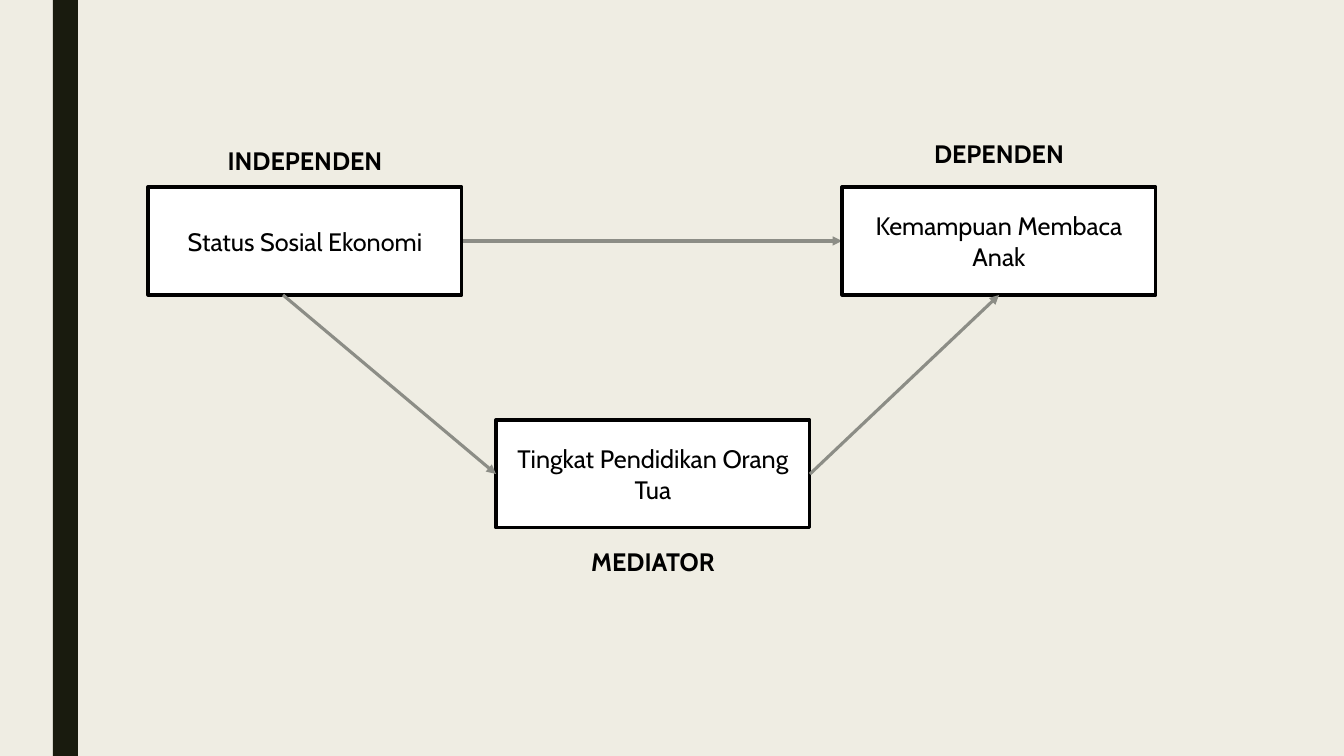
from lxml.etree import SubElement
from pptx import Presentation
from pptx.dml.color import RGBColor
from pptx.enum.shapes import MSO_CONNECTOR, MSO_SHAPE
from pptx.enum.text import MSO_ANCHOR, MSO_AUTO_SIZE, PP_ALIGN
from pptx.oxml.ns import qn
from pptx.util import Emu, Pt

CREAM = RGBColor(0xEF, 0xED, 0xE3)
OLIVE = RGBColor(0x19, 0x1B, 0x0E)
GREY = RGBColor(0x8C, 0x8D, 0x86)
WHITE = RGBColor(0xFF, 0xFF, 0xFF)
BLACK = RGBColor(0x00, 0x00, 0x00)

PAGE_WIDTH, PAGE_HEIGHT = 1344, 756
BOX_WIDTH, BOX_HEIGHT, LABEL_HEIGHT = 314, 108, 40
LINE_WIDTH = Pt(2.25)
TEXT_FORMAT = {"name": "Cabin", "size": Pt(18)}

# Variable boxes: left, top, wording, label, label offset from box top
INDEPENDENT = (148, 187, "Status Sosial Ekonomi", "INDEPENDEN", -47)
MEDIATOR = (496, 420, "Tingkat Pendidikan Orang Tua", "MEDIATOR", 121)
DEPENDENT = (842, 187, "Kemampuan Membaca Anak", "DEPENDEN", -54)


def px(length):
    return Emu(round(length * 914400 / 100.8))


def add_rectangle(page, left, top, width, height, fill):
    box = page.shapes.add_shape(
        MSO_SHAPE.RECTANGLE, px(left), px(top), px(width), px(height))
    box.shadow.inherit = False
    box.fill.solid()
    box.fill.fore_color.rgb = fill
    box.line.fill.background()
    return box


def write_text(box, text, bold=False):
    box.text_frame.word_wrap = True
    para = box.text_frame.paragraphs[0]
    para.alignment = PP_ALIGN.CENTER
    span = para.add_run()
    span.text = text
    for name, value in {**TEXT_FORMAT, "bold": bold}.items():
        setattr(span.font, name, value)
    span.font.color.rgb = BLACK


def add_variable(page, left, top, text, label, label_offset):
    box = add_rectangle(page, left, top, BOX_WIDTH, BOX_HEIGHT, WHITE)
    box.line.color.rgb = BLACK
    box.line.width = LINE_WIDTH
    box.text_frame.vertical_anchor = MSO_ANCHOR.MIDDLE
    write_text(box, text)

    caption = page.shapes.add_textbox(
        px(left), px(top + label_offset), px(BOX_WIDTH), px(LABEL_HEIGHT))
    write_text(caption, label, bold=True)
    caption.text_frame.auto_size = MSO_AUTO_SIZE.SHAPE_TO_FIT_TEXT


def add_arrow(page, start, end):
    arrow = page.shapes.add_connector(
        MSO_CONNECTOR.STRAIGHT, *(px(length) for length in (*start, *end)))
    arrow.line.color.rgb = GREY
    arrow.line.width = LINE_WIDTH
    SubElement(arrow.line._get_or_add_ln(), qn("a:tailEnd"), type="triangle")
    SubElement(arrow._element.spPr, qn("a:effectLst"))


def anchor(variable, across, down):
    """Point on a box, as fractions of its width and height."""
    return variable[0] + across * BOX_WIDTH, variable[1] + down * BOX_HEIGHT


def add_background(page):
    page.background.fill.solid()
    page.background.fill.fore_color.rgb = CREAM
    add_rectangle(page, 53, 0, 25, PAGE_HEIGHT, OLIVE)


def add_model(page):
    # Direct path lies behind the boxes
    add_arrow(page, anchor(INDEPENDENT, 1, 0.5), anchor(DEPENDENT, 0, 0.5))
    for variable in (INDEPENDENT, MEDIATOR, DEPENDENT):
        add_variable(page, *variable)
    # Mediated path
    add_arrow(page, anchor(INDEPENDENT, 0.43, 1), anchor(MEDIATOR, 0, 0.5))
    add_arrow(page, anchor(MEDIATOR, 1, 0.5), anchor(DEPENDENT, 0.5, 1))


def main():
    deck = Presentation()
    deck.slide_width, deck.slide_height = px(PAGE_WIDTH), px(PAGE_HEIGHT)
    page = deck.slides.add_slide(deck.slide_layouts[6])
    add_background(page)
    add_model(page)
    deck.save("out.pptx")


if __name__ == "__main__":
    main()
